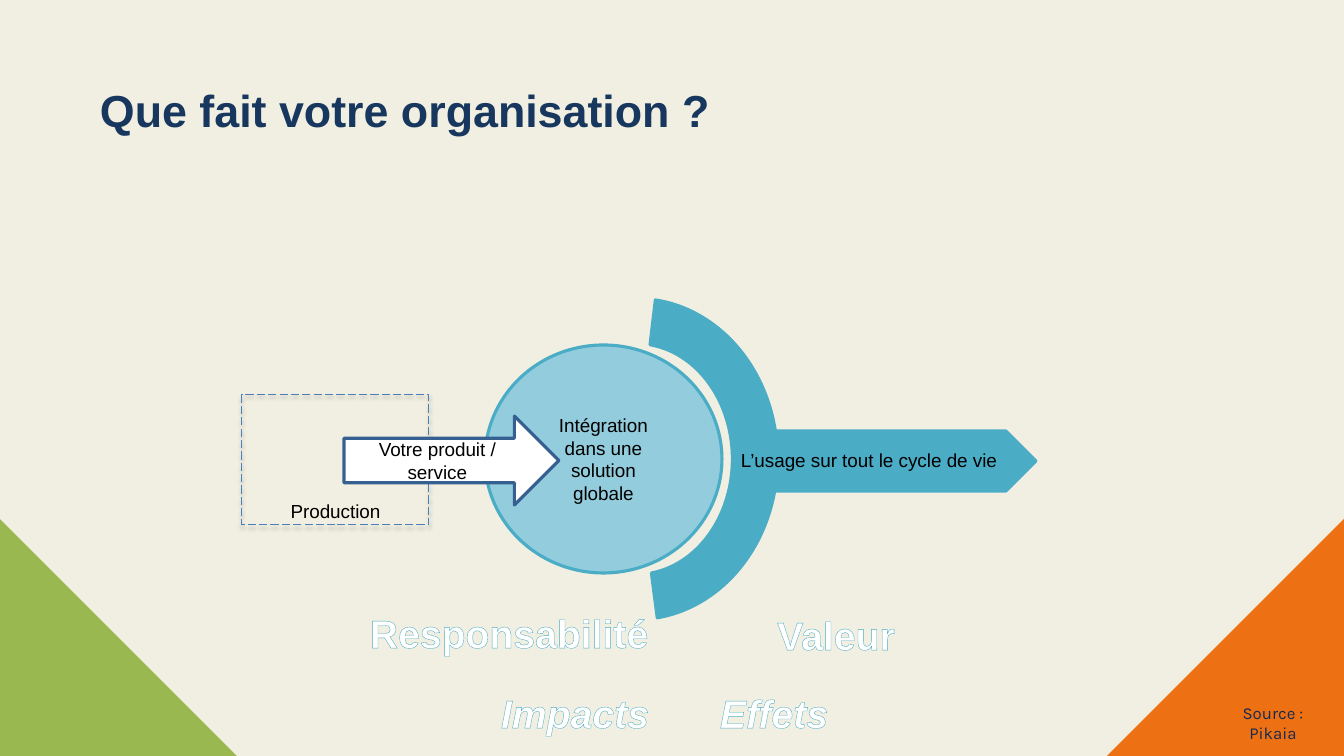
from lxml.etree import SubElement
from pptx import Presentation
from pptx.dml.color import RGBColor
from pptx.enum.dml import MSO_LINE
from pptx.enum.shapes import MSO_SHAPE
from pptx.enum.text import MSO_ANCHOR, MSO_AUTO_SIZE, PP_ALIGN
from pptx.oxml import parse_xml
from pptx.oxml.ns import nsdecls, qn
from pptx.util import Pt

WIDTH, HEIGHT = 1344, 756
SCALE = 12192000 / WIDTH
CORNER = 237

COLORS = {
    "beige": "F1EFE1", "green": "99B950", "orange": "ED7012",
    "navy": "17375E", "ink": "182953", "black": "000000", "white": "FFFFFF",
    "teal": "4BACC6", "sky": "93CDDD", "blue": "376092", "dash": "4B7EBC",
}

CORNERS = [
    ("green", [(0, HEIGHT - CORNER), (CORNER, HEIGHT), (0, HEIGHT)]),
    ("orange", [(WIDTH - CORNER, HEIGHT), (WIDTH, HEIGHT - CORNER), (WIDTH, HEIGHT)]),
]
PRODUCTION_FRAME = (242, 395, 187, 130)
TITLE = ("Que fait votre organisation ?", (93, 40, 1159, 146))
SOLUTION = ("Intégration\ndans une\nsolution\nglobale", (485, 345, 237, 228))
PRODUCT = ("Votre produit / service", (344, 416, 215, 89))
USAGE_ARC = (476, 318, 321, 282)
ARC_ADJUSTMENTS = (112.05, 211.54, 0.16)
USAGE_ARROW = (767, 431, 269, 60)
LABELS = [
    ("L’usage sur tout le cycle de vie", (731, 444, 287, 33), PP_ALIGN.LEFT),
    ("Production", (251, 495, 169, 33), PP_ALIGN.CENTER),
]
# text, box, italic
OUTLINED_WORDS = [
    ("Responsabilité", (345, 604, 328, 57), False),
    ("Valeur", (672, 606, 328, 57), False),
    ("Impacts", (485, 684, 180, 57), True),
    ("Effets", (684, 684, 180, 57), True),
]
SOURCE = ("Source : Pikaia", (1233, 703, 80, 40))


def px(value):
    return round(value * SCALE)


def color(name):
    return RGBColor.from_string(COLORS[name])


def write(shape, text, size, color_name, align=PP_ALIGN.CENTER,
          anchor=MSO_ANCHOR.MIDDLE, font_name="Arial", bold=False, italic=False):
    """Fill the shape with formatted text and return its runs."""
    frame = shape.text_frame
    frame.text = text
    frame.word_wrap = True
    frame.vertical_anchor = anchor
    runs = []
    for paragraph in frame.paragraphs:
        paragraph.alignment = align
        for run in paragraph.runs:
            font = run.font
            font.name, font.size = font_name, Pt(size)
            font.bold, font.italic = bold, italic
            font.color.rgb = color(color_name)
            runs.append(run)
    return runs


def set_margins(frame, left, top, right, bottom):
    frame.margin_left, frame.margin_top = px(left), px(top)
    frame.margin_right, frame.margin_bottom = px(right), px(bottom)


def add_shape(slide, kind, box, fill, line, line_width=2.25):
    shape = slide.shapes.add_shape(kind, *map(px, box))
    shape.shadow.inherit = False
    if fill:
        shape.fill.solid()
        shape.fill.fore_color.rgb = color(fill)
    else:
        shape.fill.background()
    shape.line.color.rgb = color(line)
    shape.line.width = Pt(line_width)
    return shape


def add_text(slide, text, box, size, color_name, **style):
    text_box = slide.shapes.add_textbox(*map(px, box))
    return text_box, write(text_box, text, size, color_name, **style)


def add_corner(slide, fill, points):
    builder = slide.shapes.build_freeform(*points[0], scale=SCALE)
    builder.add_line_segments(points[1:], close=True)
    corner = builder.convert_to_shape()
    corner.shadow.inherit = False
    corner.fill.solid()
    corner.fill.fore_color.rgb = color(fill)
    corner.line.fill.background()


def add_soft_shadow(shape):
    effects = shape._element.spPr.find(qn("a:effectLst"))
    shadow = SubElement(effects, qn("a:outerShdw"), blurRad=str(Pt(3.1)),
                        dist=str(Pt(1.8)), dir="5400000", rotWithShape="0")
    shade = SubElement(shadow, qn("a:srgbClr"), val=COLORS["black"])
    SubElement(shade, qn("a:alpha"), val="35000")


def outline_run(run):
    run._r.get_or_add_rPr().insert(0, parse_xml(
        f'<a:ln {nsdecls("a")} w="{Pt(0.8)}"><a:solidFill>'
        f'<a:srgbClr val="{COLORS["teal"]}"/></a:solidFill></a:ln>'))


def build_diagram(slide):
    frame = add_shape(slide, MSO_SHAPE.RECTANGLE, PRODUCTION_FRAME, None, "dash", 0.75)
    frame.line.dash_style = MSO_LINE.LONG_DASH
    add_soft_shadow(frame)

    text, box = SOLUTION
    write(add_shape(slide, MSO_SHAPE.OVAL, box, "sky", "teal"), text, 13.5, "black")

    text, box = PRODUCT
    product = add_shape(slide, MSO_SHAPE.RIGHT_ARROW, box, "white", "blue")
    write(product, text, 13.5, "black")
    set_margins(product.text_frame, 10, 5, 16, 5)

    arc = add_shape(slide, MSO_SHAPE.BLOCK_ARC, USAGE_ARC, "teal", "teal")
    arc.rotation = 90
    for index, value in enumerate(ARC_ADJUSTMENTS):
        arc.adjustments[index] = value
    add_shape(slide, MSO_SHAPE.PENTAGON, USAGE_ARROW, "teal", "teal")

    for text, box, align in LABELS:
        label, _ = add_text(slide, text, box, 13.5, "black",
                            align=align, anchor=MSO_ANCHOR.TOP)
        label.text_frame.auto_size = MSO_AUTO_SIZE.SHAPE_TO_FIT_TEXT


def main():
    presentation = Presentation()
    presentation.slide_width, presentation.slide_height = px(WIDTH), px(HEIGHT)
    slide = presentation.slides.add_slide(presentation.slide_layouts[6])
    slide.background.fill.solid()
    slide.background.fill.fore_color.rgb = color("beige")

    for fill, points in CORNERS:
        add_corner(slide, fill, points)

    title, _ = add_text(slide, *TITLE, 32, "navy", align=PP_ALIGN.LEFT, bold=True)
    title.text_frame.paragraphs[0].line_spacing = 0.9
    set_margins(title.text_frame, 7, 4, 7, 4)

    build_diagram(slide)

    for text, box, italic in OUTLINED_WORDS:
        word, runs = add_text(slide, text, box, 28, "white",
                              anchor=MSO_ANCHOR.TOP, bold=True, italic=italic)
        word.text_frame.auto_size = MSO_AUTO_SIZE.SHAPE_TO_FIT_TEXT
        for run in runs:
            outline_run(run)

    source, _ = add_text(slide, *SOURCE, 12, "ink",
                         anchor=MSO_ANCHOR.BOTTOM, font_name="Karla")
    set_margins(source.text_frame, 0, 0, 0, 0)

    presentation.save("out.pptx")


if __name__ == "__main__":
    main()
